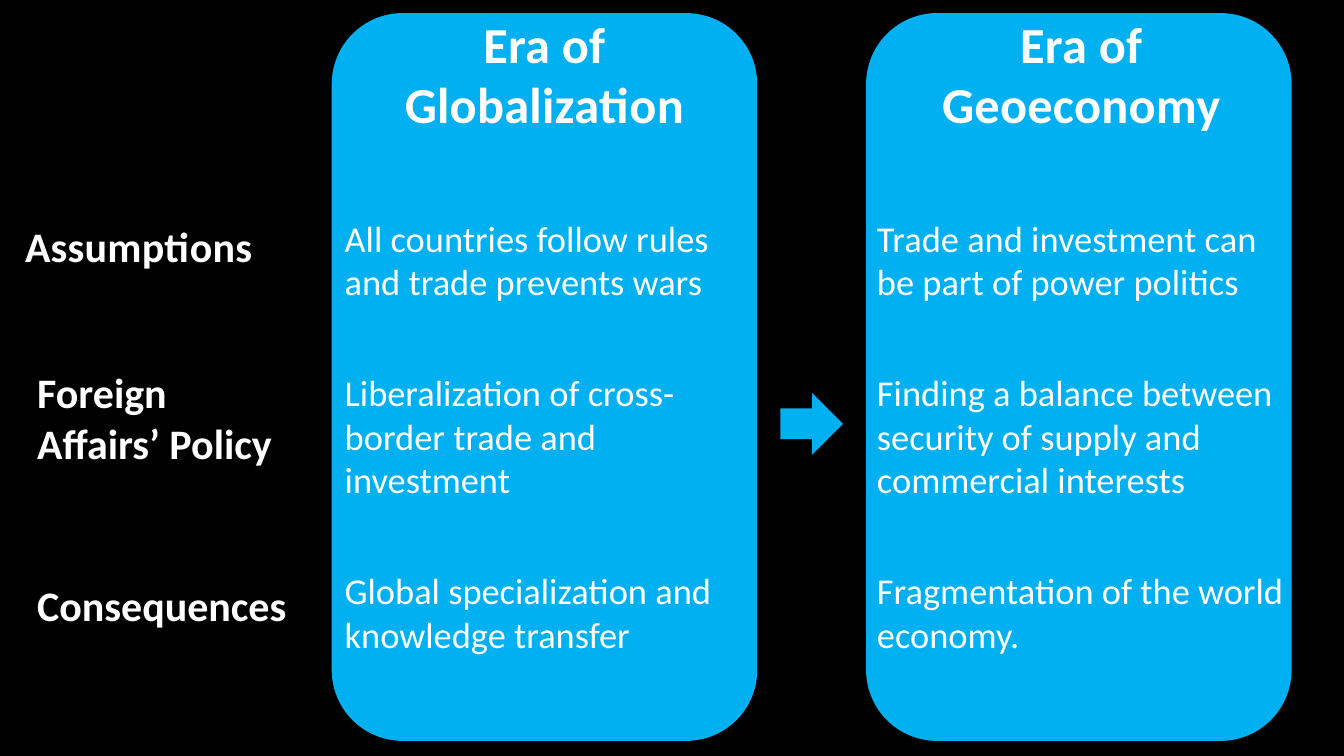
import pptx
import pptx.util
import pptx.dml.color
import pptx.enum.shapes
import pptx.enum.text

Inches = pptx.util.Inches
Pt = pptx.util.Pt
SHAPE = pptx.enum.shapes.MSO_SHAPE
ALIGN = pptx.enum.text.PP_ALIGN


def set_fill(fill, color):
    fill.solid()
    fill.fore_color.rgb = pptx.dml.color.RGBColor.from_string(color)


def add_text(paragraphs, box, size, bold=False, align=ALIGN.LEFT, after=0, spacing=0):
    """Add a white text box; box is left, top, width, height in inches, spacing is in points."""
    tf = s.shapes.add_textbox(*map(Inches, box)).text_frame
    tf.word_wrap = True
    tf.auto_size = pptx.enum.text.MSO_AUTO_SIZE.SHAPE_TO_FIT_TEXT
    for i, text in enumerate(paragraphs):
        p = tf.add_paragraph() if i else tf.paragraphs[0]
        p.alignment = align
        p.space_after = Pt(after)
        r = p.add_run()
        r.text = text
        r.font.name = "Calibri"
        r.font.size = Pt(size)
        r.font.bold = bold
        set_fill(r.font.fill, "FFFFFF")
        if spacing:
            r._r.get_or_add_rPr().set("spc", str(round(spacing * 100)))


prs = pptx.Presentation()
prs.slide_width = Inches(13.33)
prs.slide_height = Inches(7.5)
s = prs.slides.add_slide(prs.slide_layouts[6])
set_fill(s.background.fill, "000000")

# Two era panels and the arrow between them
for kind, box in [
    (SHAPE.ROUNDED_RECTANGLE, (3.29, 0.13, 4.22, 7.22)),
    (SHAPE.ROUNDED_RECTANGLE, (8.59, 0.13, 4.22, 7.22)),
    (SHAPE.RIGHT_ARROW, (7.74, 3.9, 0.62, 0.61)),
]:
    sp = s.shapes.add_shape(kind, *map(Inches, box))
    sp.shadow.inherit = False
    set_fill(sp.fill, "00B0F0")
    sp.line.fill.background()

# Heading and statements of each era
eras = [
    ("Era of Globalization", 3.29, 3.32, 4.22, [
        "All countries follow rules and trade prevents wars",
        "Liberalization of cross-border trade and investment",
        "Global specialization and knowledge transfer",
    ]),
    ("Era of Geoeconomy", 8.59, 8.6, 4.27, [
        "Trade and investment can be part of power politics",
        "Finding a balance between security of supply and commercial interests",
        "Fragmentation of the world economy.",
    ]),
]
for heading, heading_left, body_left, width, statements in eras:
    add_text([heading], (heading_left, 0.08, width, 1.31), 36, bold=True,
             align=ALIGN.CENTER, after=6, spacing=0.2)
    add_text(statements, (body_left, 2.09, width, 4.51), 26, after=48)

# Row labels
add_text(["Assumptions"], (0.15, 2.14, 2.81, 0.61), 30, bold=True, after=6, spacing=0.2)
add_text(["Foreign Affairs’ Policy"], (0.27, 3.59, 2.55, 1.11), 30, bold=True)
add_text(["Consequences"], (0.27, 5.7, 2.68, 0.61), 30, bold=True)

prs.save("out.pptx")
